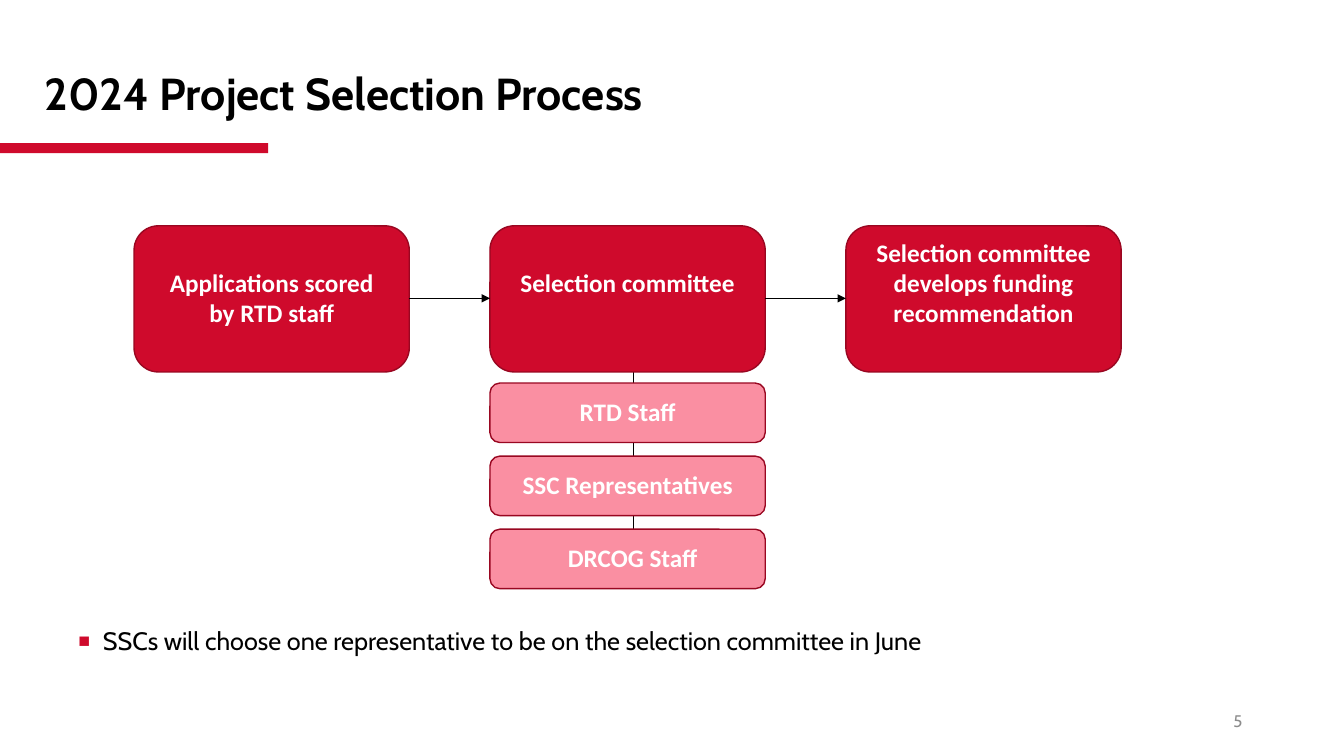
import pptx
import pptx.util
import pptx.dml.color
import pptx.enum.shapes
import pptx.enum.text
import pptx.oxml
import pptx.oxml.ns

Inches, Pt = pptx.util.Inches, pptx.util.Pt
RGB = pptx.dml.color.RGBColor
Kind = pptx.enum.shapes.MSO_SHAPE
Align = pptx.enum.text.PP_ALIGN
Anchor = pptx.enum.text.MSO_ANCHOR

RED = RGB(0xCF, 0x0A, 0x2C)
EDGE = RGB(0x99, 0x07, 0x21)
PINK = RGB(0xFA, 0x8F, 0xA2)
BLACK = RGB(0, 0, 0)
WHITE = RGB(0xFF, 0xFF, 0xFF)
GRAY = RGB(0x8C, 0x8C, 0x8C)

TITLE = "2024 Project Selection Process"
NOTE = "SSCs will choose one representative to be on the selection committee in June"
PAGE = "5"
STEPS = [
    ("Applications scored by RTD staff", 2.6, 0.71),
    ("Selection committee", 2.6, 0.71),
    ("Selection committee develops funding recommendation", 2.3, 1.31),
]
GROUPS = [("RTD Staff", 0), ("SSC Representatives", 0), ("DRCOG Staff", 0.05)]

LEFT, TOP, WIDE, TALL, STEP = 1.33, 2.24, 2.73, 1.45, 3.53
SUBTOP, SUBTALL, SUBSTEP = 3.8, 0.59, 0.725
PAD, FLOW = 0.2, 2.96

HEAD = {"size": Pt(32), "name": "Cabin", "bold": True}
BODY = {"size": Pt(18), "name": "Cabin", "bold": False}
FOOT = {"size": Pt(12), "name": "Cabin", "bold": False}
LABEL = {"size": Pt(18), "name": "Calibri", "bold": True}


def place(item, *box):
    """Move and size an item in inches."""
    names = ("left", "top", "width", "height")
    for name, value in zip(names, box):
        setattr(item, name, Inches(value))


def write(item, text, style, color, align, anchor=Anchor.TOP):
    """Put one formatted paragraph in an item and return it."""
    frame = item.text_frame
    frame.word_wrap = True
    frame.vertical_anchor = anchor
    par = frame.paragraphs[0]
    par.alignment = align
    run = par.add_run()
    run.text = text
    for name, value in style.items():
        setattr(run.font, name, value)
    run.font.color.rgb = color
    return par


def add_text(slide, box, *args):
    """Add a text box with one paragraph."""
    item = slide.shapes.add_textbox(*map(Inches, box))
    write(item, *args)


def add_box(slide, kind, box, fill, edge=None):
    """Add a filled shape, outlined if an edge colour is given."""
    item = slide.shapes.add_shape(kind, *map(Inches, box))
    item.shadow.inherit = False
    item.fill.solid()
    item.fill.fore_color.rgb = fill
    if edge is None:
        item.line.fill.background()
    else:
        item.line.color.rgb = edge
        item.line.width = Pt(1)


def add_line(slide, ends, arrow=False):
    """Add a thin black line with an optional arrowhead."""
    line = slide.shapes.add_connector(
        pptx.enum.shapes.MSO_CONNECTOR.STRAIGHT, *map(Inches, ends))
    line.line.color.rgb = BLACK
    line.line.width = Pt(0.5)
    if arrow:
        tail = pptx.oxml.parse_xml(
            f'<a:tailEnd {pptx.oxml.ns.nsdecls("a")} type="triangle"/>')
        line.line._get_or_add_ln().append(tail)
    line._element.spPr.append(pptx.oxml.parse_xml(
        f'<a:effectLst {pptx.oxml.ns.nsdecls("a")}/>'))


def add_bullet(par):
    """Give a paragraph a red square bullet with a hanging indent."""
    props = par._p.get_or_add_pPr()
    props.set("marL", str(Inches(0.25)))
    props.set("indent", str(Inches(-0.25)))
    for tag in (f'buClr {{}}><a:srgbClr val="{RED}"/></a:buClr',
                'buSzPct {} val="150000"/',
                'buFont {} typeface="Arial"/',
                'buChar {} char="▪"/'):
        props.append(pptx.oxml.parse_xml(
            "<a:" + tag.format(pptx.oxml.ns.nsdecls("a")) + ">"))
    par.space_before = Pt(0)


def main():
    """Build and save the slide."""
    deck = pptx.Presentation()
    deck.slide_width, deck.slide_height = Inches(13.33), Inches(7.5)
    slide = deck.slides.add_slide(deck.slide_layouts[1])

    add_box(slide, Kind.RECTANGLE, (0, 1.42, 2.66, 0.1), RED)
    title, body = slide.placeholders
    place(title, 0.34, 0.23, 11.5, 1.45)
    par = write(title, TITLE, HEAD, BLACK, Align.LEFT, Anchor.MIDDLE)
    par.line_spacing = 0.9
    place(body, 0.67, 6.15, 10.05, 1.12)
    add_bullet(write(body, NOTE, BODY, BLACK, Align.LEFT))
    add_text(slide, (9.42, 6.95, 3, 0.4), PAGE, FOOT, GRAY, Align.RIGHT,
             Anchor.MIDDLE)

    mid = LEFT + STEP
    add_line(slide, (6.28, 3.24, 6.28, SUBTOP + 2 * SUBSTEP))
    for i, (text, top, tall) in enumerate(STEPS):
        left = LEFT + i * STEP
        add_box(slide, Kind.ROUNDED_RECTANGLE, (left, TOP, WIDE, TALL),
                RED, EDGE)
        add_text(slide, (left + PAD, top, WIDE - 2 * PAD, tall),
                 text, LABEL, WHITE, Align.CENTER)
        if i:
            add_line(slide, (left - STEP + WIDE, FLOW, left, FLOW), True)
    for i, (text, shift) in enumerate(GROUPS):
        top = SUBTOP + i * SUBSTEP
        add_box(slide, Kind.ROUNDED_RECTANGLE, (mid, top, WIDE, SUBTALL),
                PINK, EDGE)
        add_text(slide, (mid + PAD + shift, top + 0.08, WIDE - 2 * PAD, 0.4),
                 text, LABEL, WHITE, Align.CENTER)

    deck.save("out.pptx")


if __name__ == "__main__":
    main()
